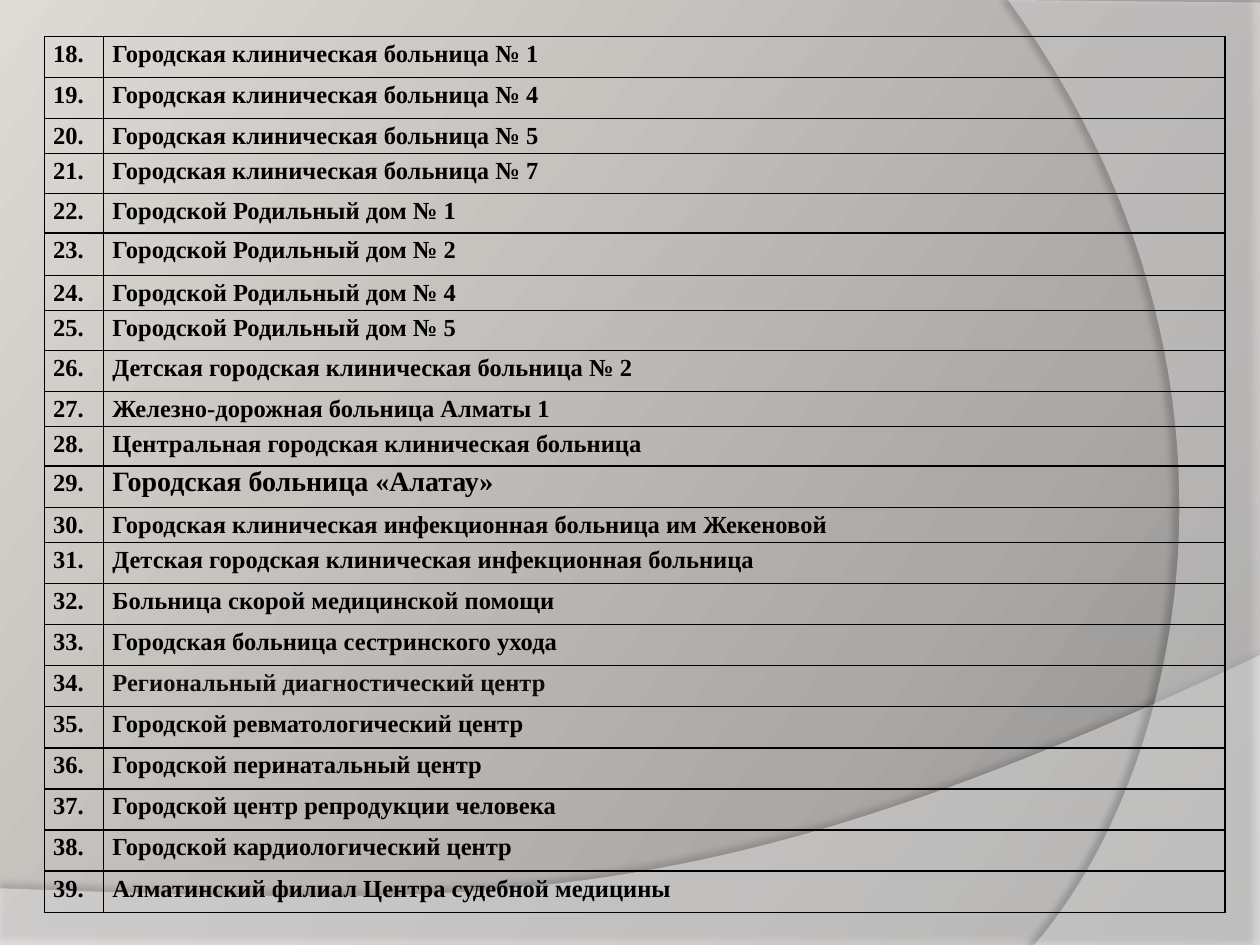
from lxml import etree
from pptx import Presentation
from pptx.dml.color import RGBColor
from pptx.oxml.ns import qn
from pptx.util import Pt

FONT = "Times New Roman"
FIRST = 18
TALL, MID, LOW = 23.5, 22.75, 20
ROWS = [
    ("Городская клиническая больница № 1", TALL),
    ("Городская клиническая больница № 4", TALL),
    ("Городская клиническая больница № 5", LOW),
    ("Городская клиническая больница № 7", MID),
    ("Городской Родильный дом № 1", MID),
    ("Городской Родильный дом № 2", 24.25),
    ("Городской Родильный дом № 4", LOW),
    ("Городской Родильный дом № 5", MID),
    ("Детская городская клиническая больница № 2", TALL),
    ("Железно-дорожная больница Алматы 1", LOW),
    ("Центральная городская клиническая больница", MID),
    ("Городская больница «Алатау»", TALL),
    ("Городская клиническая инфекционная больница им Жекеновой", LOW),
    ("Детская городская клиническая инфекционная больница", TALL),
    ("Больница скорой медицинской помощи", TALL),
    ("Городская больница сестринского ухода", TALL),
    ("Региональный диагностический центр", TALL),
    ("Городской ревматологический центр", TALL),
    ("Городской перинатальный центр", TALL),
    ("Городской центр репродукции человека", TALL),
    ("Городской кардиологический центр", TALL),
    ("Алматинский филиал Центра судебной медицины", TALL),
]
STYLES = {29: {"size": 16, "gap": 1.0}, 34: {"color": "0D0D0D"}}
COLS = (33.9, 640.8)
STOPS = [(0, "8F8D8B"), (30, "ABA8A6"), (100, "DEDBD7")]
# Each wave: straight corners, then the curve's four control points
WAVES = [
    {"edge": [(0, 540.5), (720, 540.5)],
     "curve": [(720, 374.4), (402.5, 525), (281.5, 517.5), (0, 507.6)],
     "alpha": 45, "shade": (35, 4, 3.5, 270)},
    {"edge": [(720, 1.5), (720, 540)],
     "curve": [(591, 540), (673.2, 445.7), (733, 216), (576, 0)],
     "alpha": 40, "shade": (45, 4, 4, 180)},
]


def rgb(code):
    return RGBColor.from_string(code)


def node(parent, tag, **attrs):
    """Add an XML child with the given attributes."""
    child = etree.SubElement(parent, qn(tag))
    for key, value in attrs.items():
        child.set(key, str(value))
    return child


def bend(pts, steps=48):
    """Sample a cubic Bezier curve."""
    out = []
    for i in range(steps + 1):
        t = i / steps
        mix = ((1 - t) ** 3, 3 * t * (1 - t) ** 2, 3 * t * t * (1 - t), t ** 3)
        out.append(tuple(sum(m * p[k] for m, p in zip(mix, pts)) for k in (0, 1)))
    return out


def add_wave(slide, edge, curve, alpha, shade):
    pts = [(Pt(x), Pt(y)) for x, y in edge + bend(curve)]
    pen = slide.shapes.build_freeform(*pts[0])
    pen.add_line_segments(pts[1:], close=True)
    wave = pen.convert_to_shape()
    wave.fill.solid()
    wave.fill.fore_color.rgb = rgb("FFFFFF")
    wave.line.fill.background()
    wave.shadow.inherit = False
    props = wave.element.spPr
    node(props.find(".//" + qn("a:srgbClr")), "a:alpha", val=alpha * 1000)
    dark, blur, dist, angle = shade
    cast = node(props.find(qn("a:effectLst")), "a:outerShdw", blurRad=Pt(blur),
                dist=Pt(dist), dir=angle * 60000, algn="ctr", rotWithShape=0)
    color = node(cast, "a:srgbClr", val="000000")
    node(color, "a:alpha", val=dark * 1000)


def put(cell, text, size=14, color="000000", gap=1.15):
    cell.margin_left = cell.margin_right = Pt(5)
    cell.margin_top = cell.margin_bottom = 0
    para = cell.text_frame.paragraphs[0]
    para.line_spacing = gap
    run = para.add_run()
    run.text = text
    run.font.name = FONT
    run.font.size = Pt(size)
    run.font.bold = True
    run.font.color.rgb = rgb(color)
    props = cell._tc.get_or_add_tcPr()
    for side in ("a:lnL", "a:lnR", "a:lnT", "a:lnB"):
        fill = node(node(props, side, w=Pt(1)), "a:solidFill")
        node(fill, "a:srgbClr", val="000000")
    cell.fill.background()


def paint_back(slide):
    fill = slide.background.fill
    fill.gradient()
    fill.gradient_angle = 143
    stops = slide.element.find(".//" + qn("a:gsLst"))
    for old in list(stops):
        stops.remove(old)
    for pos, code in STOPS:
        node(node(stops, "a:gs", pos=pos * 1000), "a:srgbClr", val=code)


def add_list(slide):
    frame = slide.shapes.add_table(len(ROWS), 2, Pt(25.4), Pt(20.75),
                                   Pt(sum(COLS)), Pt(sum(h for _, h in ROWS)))
    table = frame.table
    table.first_row = table.horz_banding = False
    for col, width in zip(table.columns, COLS):
        col.width = Pt(width)
    for i, (name, height) in enumerate(ROWS):
        table.rows[i].height = Pt(height)
        num = FIRST + i
        put(table.cell(i, 0), f"{num}.")
        put(table.cell(i, 1), name, **STYLES.get(num, {}))


def main():
    deck = Presentation()
    deck.slide_width, deck.slide_height = Pt(720), Pt(540)
    slide = deck.slides.add_slide(deck.slide_layouts[6])
    paint_back(slide)
    for wave in WAVES:
        add_wave(slide, **wave)
    add_list(slide)
    deck.save("out.pptx")


if __name__ == "__main__":
    main()
